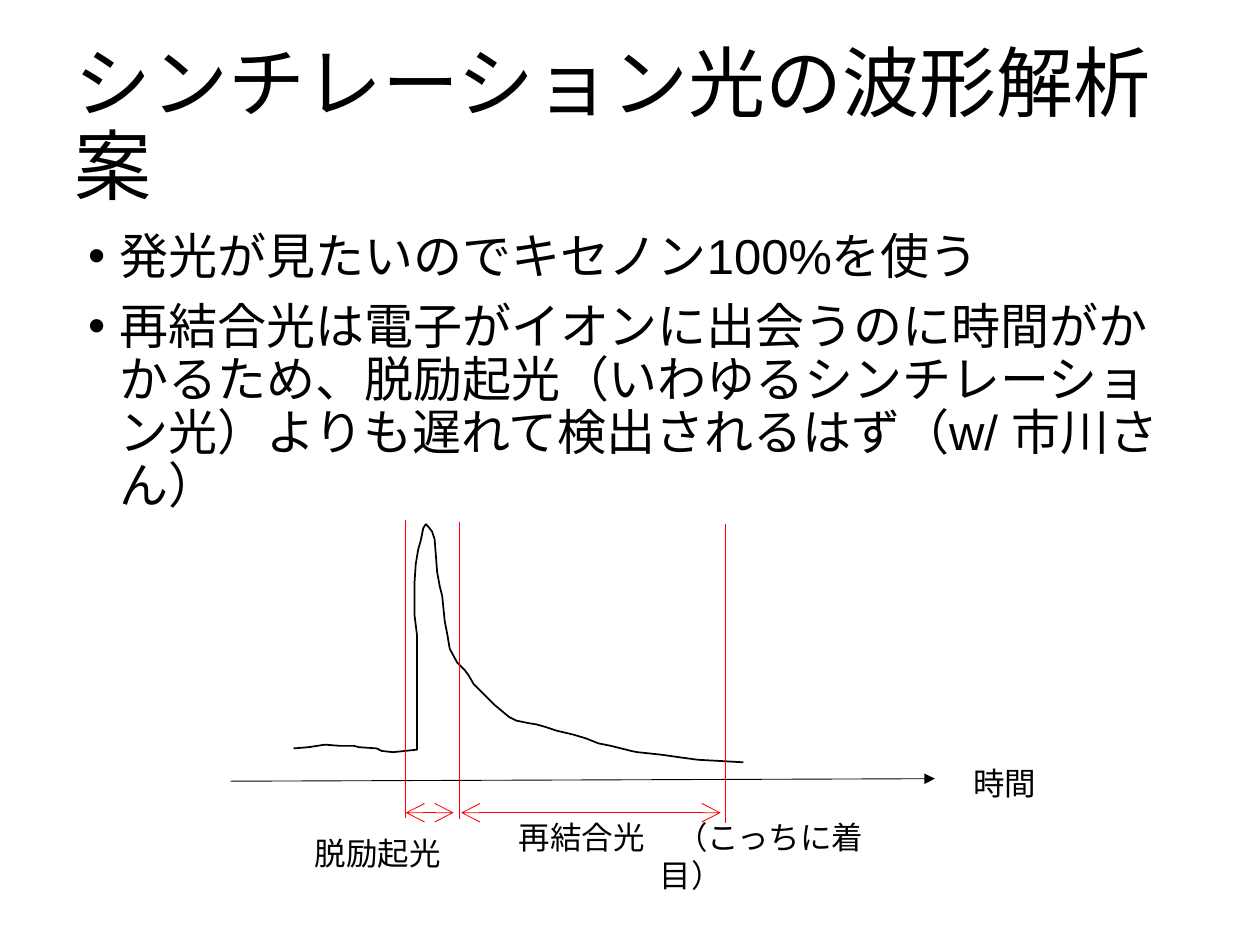
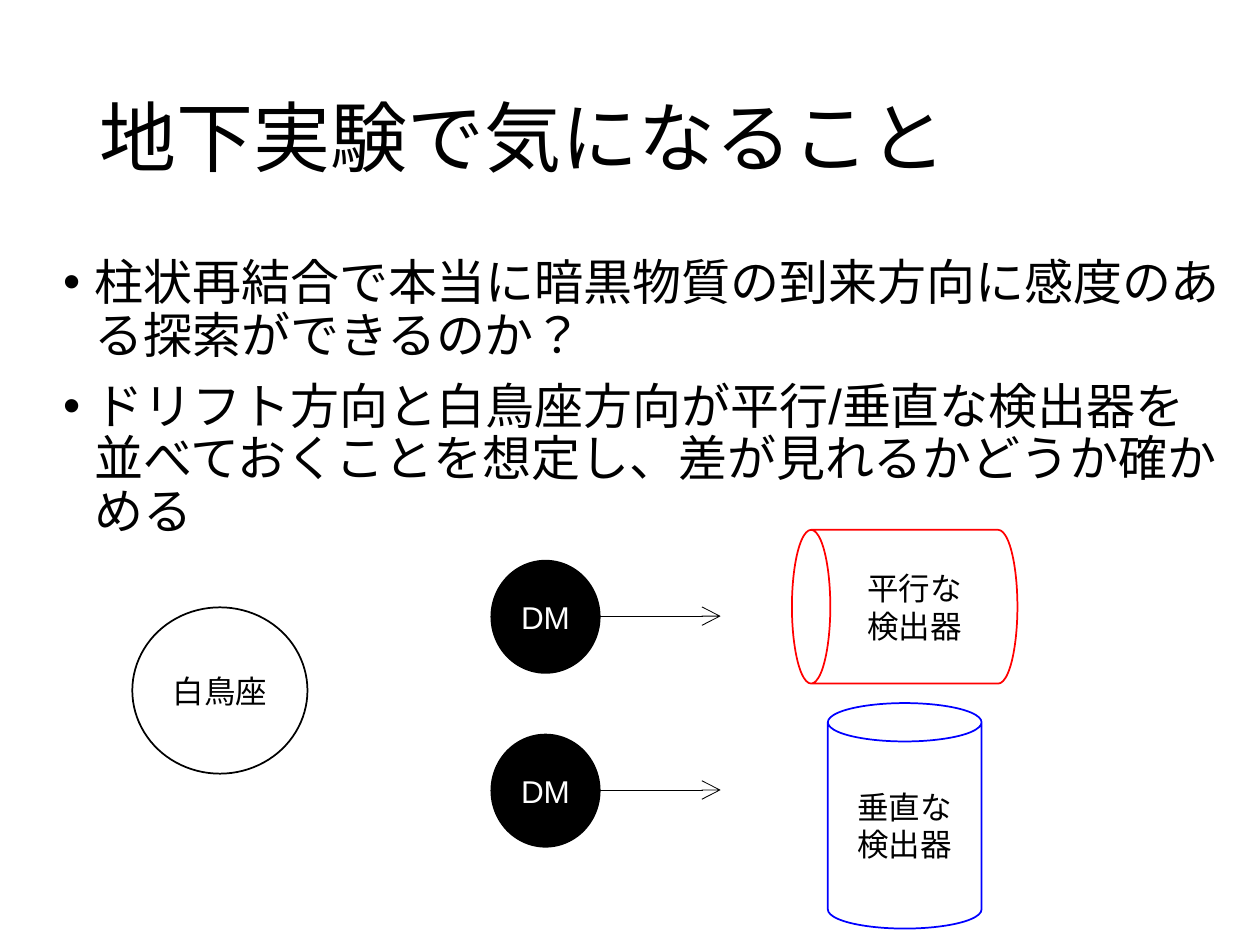
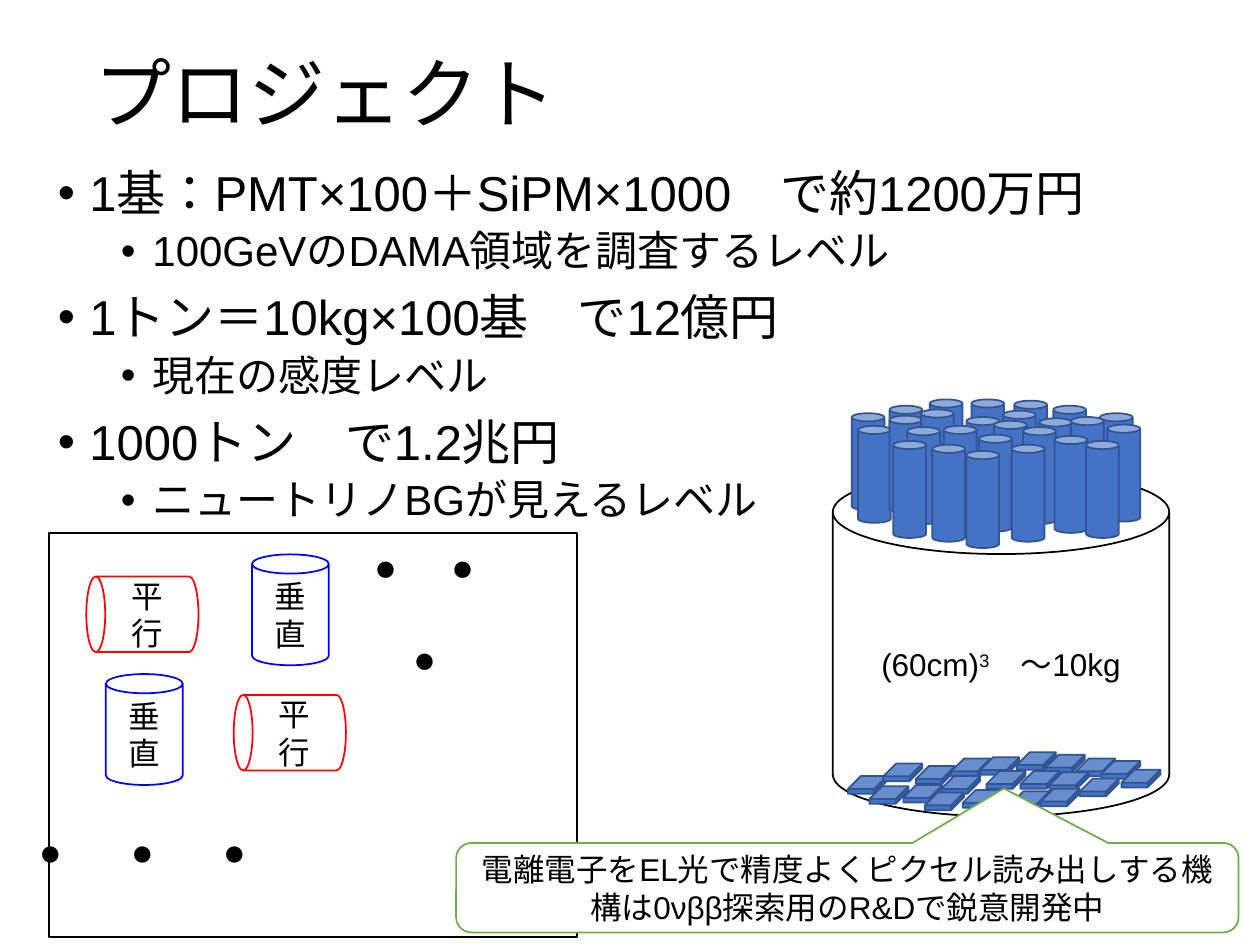
from dataclasses import dataclass

from lxml import etree
from pptx import Presentation
from pptx import util as u
from pptx.dml import color as dml
from pptx.enum import lang, shapes, text
from pptx.oxml import ns

SCALE = 9144
FONT = "Arial"
BLACK, WHITE, RED, BLUE = "000000", "FFFFFF", "FF0000", "0000FF"
SENSOR_FILL, SENSOR_LINE, GREEN = "4472C4", "325491", "70AD47"
KIND = shapes.MSO_SHAPE
CENTER, LEFT = text.PP_ALIGN.CENTER, text.PP_ALIGN.LEFT

BULLET_SIZES = (28, 24)
BULLET_SPACING = (10, 5)
BULLET_MARGINS = (25, 75)
BULLET_HANG = 25
ARROW_SIZES = {"arrow": "lg", "triangle": "med"}


@dataclass(frozen=True)
class Box:
    left: int
    top: int
    width: int
    height: int

    def place(self, shape) -> None:
        shape.left, shape.top = px(self.left), px(self.top)
        shape.width, shape.height = px(self.width), px(self.height)


@dataclass(frozen=True)
class Node:
    kind: shapes.MSO_SHAPE
    box: Box
    label: str = ""
    fill: str | None = WHITE
    line: str | None = BLACK
    color: str = BLACK
    size: int = 18
    rotation: int = 0
    vertical: bool = False
    adjustments: tuple[float, ...] = ()


@dataclass(frozen=True)
class Line:
    start: tuple[int, int]
    end: tuple[int, int]
    color: str = BLACK
    head: str = ""
    tail: str = ""


@dataclass(frozen=True)
class Bullet:
    label: str
    level: int = 0


def px(length: int) -> u.Emu:
    return u.Emu(length * SCALE)


def rgb(value: str) -> dml.RGBColor:
    return dml.RGBColor.from_string(value)


def add_xml(parent, tag: str, **attributes: str) -> None:
    etree.SubElement(parent, ns.qn(tag), attributes)


def write(paragraph, label: str, *, size: int = 18, color: str = BLACK,
          align=CENTER, raised: bool = False) -> None:
    paragraph.alignment = align
    run = paragraph.add_run()
    run.text = label
    run.font.name = FONT
    run.font.size = u.Pt(size)
    run.font.color.rgb = rgb(color)
    run.font.language_id = lang.MSO_LANGUAGE_ID.JAPANESE
    if raised:
        run.font._element.set("baseline", "30000")


def next_paragraph(frame, index: int):
    return frame.add_paragraph() if index else frame.paragraphs[0]


def add_page(presentation, title: str, title_box: Box,
             bullets: list[Bullet], body_box: Box):
    slide = presentation.slides.add_slide(presentation.slide_layouts[1])
    heading, body = slide.shapes.title, slide.placeholders[1]
    title_box.place(heading)
    body_box.place(body)
    for placeholder in (heading, body):
        placeholder.text_frame.auto_size = text.MSO_AUTO_SIZE.NONE
    heading.text_frame.vertical_anchor = text.MSO_ANCHOR.MIDDLE
    paragraph = heading.text_frame.paragraphs[0]
    paragraph.line_spacing = 0.9
    write(paragraph, title, size=44, align=LEFT)
    for index, bullet in enumerate(bullets):
        paragraph = next_paragraph(body.text_frame, index)
        paragraph.level = bullet.level
        paragraph.line_spacing = 0.9
        paragraph.space_before = u.Pt(BULLET_SPACING[bullet.level])
        write(paragraph, bullet.label, size=BULLET_SIZES[bullet.level], align=LEFT)
        properties = paragraph._p.get_or_add_pPr()
        properties.set("marL", str(px(BULLET_MARGINS[bullet.level])))
        properties.set("indent", str(px(-BULLET_HANG)))
        add_xml(properties, "a:buFont", typeface=FONT)
        add_xml(properties, "a:buChar", char="•")
    return slide


def add_node(slide, node: Node):
    shape = slide.shapes.add_shape(node.kind, 0, 0, 0, 0)
    node.box.place(shape)
    shape.rotation = node.rotation
    shape.shadow.inherit = False
    for index, value in enumerate(node.adjustments):
        shape.adjustments[index] = value
    if node.fill:
        shape.fill.solid()
        shape.fill.fore_color.rgb = rgb(node.fill)
    else:
        shape.fill.background()
    if node.line:
        shape.line.color.rgb = rgb(node.line)
        shape.line.width = u.Pt(1)
    else:
        shape.line.fill.background()
    frame = shape.text_frame
    frame.word_wrap = True
    frame.vertical_anchor = text.MSO_ANCHOR.MIDDLE
    if node.vertical:
        frame._txBody.bodyPr.set("vert", "vert")
    if node.label:
        for index, row in enumerate(node.label.split("\n")):
            write(next_paragraph(frame, index), row, size=node.size, color=node.color)
    return shape


def add_line(slide, line: Line) -> None:
    connector = slide.shapes.add_connector(
        shapes.MSO_CONNECTOR.STRAIGHT, *map(px, line.start + line.end))
    connector.line.color.rgb = rgb(line.color)
    connector.line.width = u.Pt(0.5)
    outline = connector.line._get_or_add_ln()
    for tag, style in (("a:headEnd", line.head), ("a:tailEnd", line.tail)):
        if style:
            size = ARROW_SIZES[style]
            add_xml(outline, tag, type=style, w=size, len=size)
    add_xml(connector._element.spPr, "a:effectLst")


def label_node(label: str, box: Box, size: int = 18, rotation: int = 0) -> Node:
    return Node(KIND.RECTANGLE, box, label, fill=None, line=None,
                size=size, rotation=rotation)


def upright_detector(label: str, box: Box) -> Node:
    return Node(KIND.CAN, box, label, line=BLUE)


def lying_detector(label: str, box: Box) -> Node:
    return Node(KIND.CAN, box, label, line=RED, rotation=270, vertical=True)


WAVEFORM = [
    (233, 594), (245, 593), (258, 591), (270, 592), (281, 592), (285, 593),
    (299, 594), (303, 596), (312, 597), (331, 595), (331, 504), (329, 488),
    (329, 463), (330, 448), (332, 436), (334, 429), (336, 419), (338, 416),
    (340, 418), (343, 422), (345, 428), (346, 441), (347, 454), (349, 465),
    (351, 473), (353, 493), (355, 503), (357, 515), (363, 526), (369, 532),
    (372, 536), (376, 543), (388, 555), (392, 559), (398, 564), (404, 569),
    (410, 572), (420, 574), (426, 575), (433, 577), (442, 580), (455, 583),
    (465, 586), (475, 590), (485, 592), (501, 596), (506, 597), (525, 599),
    (539, 601), (554, 603), (572, 604), (590, 605),
]

PHOTOTUBES = [
    (676, 328), (706, 322), (738, 317), (771, 317), (805, 318), (836, 322),
    (873, 328), (681, 338), (706, 330), (731, 325), (767, 331), (796, 326),
    (825, 332), (850, 331), (879, 337), (789, 334), (749, 338), (720, 339),
    (812, 339), (837, 346), (777, 345), (740, 353), (709, 350), (767, 358),
    (803, 353), (862, 350),
]

PIXELS = [
    (673, 616), (690, 624), (727, 608), (701, 606), (717, 623), (755, 602),
    (778, 601), (807, 597), (830, 599), (854, 602), (874, 604), (747, 616),
    (783, 612), (734, 629), (764, 627), (810, 612), (833, 613), (857, 618),
    (890, 611), (802, 628), (826, 626),
]


def build_waveform_page(presentation) -> None:
    slide = add_page(
        presentation, "シンチレーション光の波形解析案", Box(49, 29, 901, 145),
        [Bullet("発光が見たいのでキセノン100%を使う"),
         Bullet("再結合光は電子がイオンに出会うのに時間がかかるため、脱励起光"
                "（いわゆるシンチレーション光）よりも遅れて検出されるはず（w/ 市川さん）")],
        Box(60, 179, 874, 523))
    add_line(slide, Line((183, 620), (742, 618), tail="triangle"))
    add_node(slide, Node(KIND.RECTANGLE, Box(751, 605, 93, 32), "時間", line=None))

    builder = slide.shapes.build_freeform(*WAVEFORM[0], scale=SCALE)
    builder.add_line_segments(WAVEFORM[1:], close=False)
    curve = builder.convert_to_shape()
    curve.shadow.inherit = False
    curve.fill.background()
    curve.line.color.rgb = rgb(BLACK)
    curve.line.width = u.Pt(1)

    add_node(slide, label_node("脱励起光", Box(233, 661, 134, 32)))
    for line in (
        Line((365, 414), (365, 650), RED),
        Line((576, 416), (576, 653), RED),
        Line((366, 645), (572, 645), RED, "arrow", "arrow"),
        Line((322, 413), (322, 649), RED),
        Line((322, 645), (360, 645), RED, "arrow", "arrow"),
    ):
        add_line(slide, line)
    add_node(slide, label_node("再結合光　（こっちに着目）", Box(381, 663, 335, 32)))


def build_detector_page(presentation) -> None:
    slide = add_page(
        presentation, "地下実験で気になること", Box(69, 40, 862, 145),
        [Bullet("柱状再結合で本当に暗黒物質の到来方向に感度のある探索ができるのか？"),
         Bullet("ドリフト方向と白鳥座方向が平行/垂直な検出器を並べておくことを想定し、"
                "差が見れるかどうか確かめる")],
        Box(40, 200, 939, 476))
    add_node(slide, upright_detector("垂直な\n検出器", Box(657, 558, 122, 179)))
    add_node(slide, lying_detector("平行な\n検出器", Box(657, 392, 122, 179)))
    add_node(slide, Node(KIND.OVAL, Box(105, 482, 139, 132), "白鳥座"))
    for top in (445, 583):
        add_node(slide, Node(KIND.OVAL, Box(390, top, 86, 89), "DM",
                             fill=BLACK, color=WHITE))
        add_line(slide, Line((476, top + 44), (572, top + 44), tail="arrow"))


def build_project_page(presentation) -> None:
    slide = add_page(
        presentation, "プロジェクト", Box(65, 5, 924, 145),
        [Bullet("1基：PMT×100＋SiPM×1000　で約1200万円"),
         Bullet("100GeVのDAMA領域を調査するレベル", 1),
         Bullet("1トン＝10kg×100基　で12億円"),
         Bullet("現在の感度レベル", 1),
         Bullet("1000トン　で1.2兆円"),
         Bullet("ニュートリノBGが見えるレベル", 1)],
        Box(36, 129, 964, 560))
    for node in (
        Node(KIND.RECTANGLE, Box(39, 423, 419, 321)),
        upright_detector("垂直", Box(84, 535, 61, 88)),
        lying_detector("平行", Box(83, 443, 60, 89)),
        upright_detector("垂直", Box(200, 440, 61, 88)),
        lying_detector("平行", Box(200, 537, 60, 89)),
        label_node("・・・", Box(261, 435, 152, 106), size=44),
        label_node("・・・", Box(55, 626, 119, 106), size=44, rotation=90),
    ):
        add_node(slide, node)

    vessel = add_node(slide, Node(KIND.CAN, Box(661, 373, 267, 275)))
    volume = vessel.text_frame.paragraphs[0]
    write(volume, "(60cm)")
    write(volume, "3", raised=True)
    write(volume, "　～10kg")

    for left, top in PHOTOTUBES:
        add_node(slide, Node(KIND.CAN, Box(left, top, 26, 77),
                             fill=SENSOR_FILL, line=SENSOR_LINE))
    for left, top in PIXELS:
        add_node(slide, Node(KIND.CUBE, Box(left, top, 31, 14), fill=SENSOR_FILL,
                             line=SENSOR_LINE, adjustments=(0.73,)))
    add_node(slide, Node(
        KIND.ROUNDED_RECTANGULAR_CALLOUT, Box(362, 669, 621, 71),
        "電離電子をEL光で精度よくピクセル読み出しする機構は0νββ探索用のR&Dで鋭意開発中",
        line=GREEN, adjustments=(0.2, -1.11, 0.17)))


def main() -> None:
    presentation = Presentation()
    presentation.slide_width, presentation.slide_height = px(1000), px(750)
    build_waveform_page(presentation)
    build_detector_page(presentation)
    build_project_page(presentation)
    presentation.save("out.pptx")


if __name__ == "__main__":
    main()
